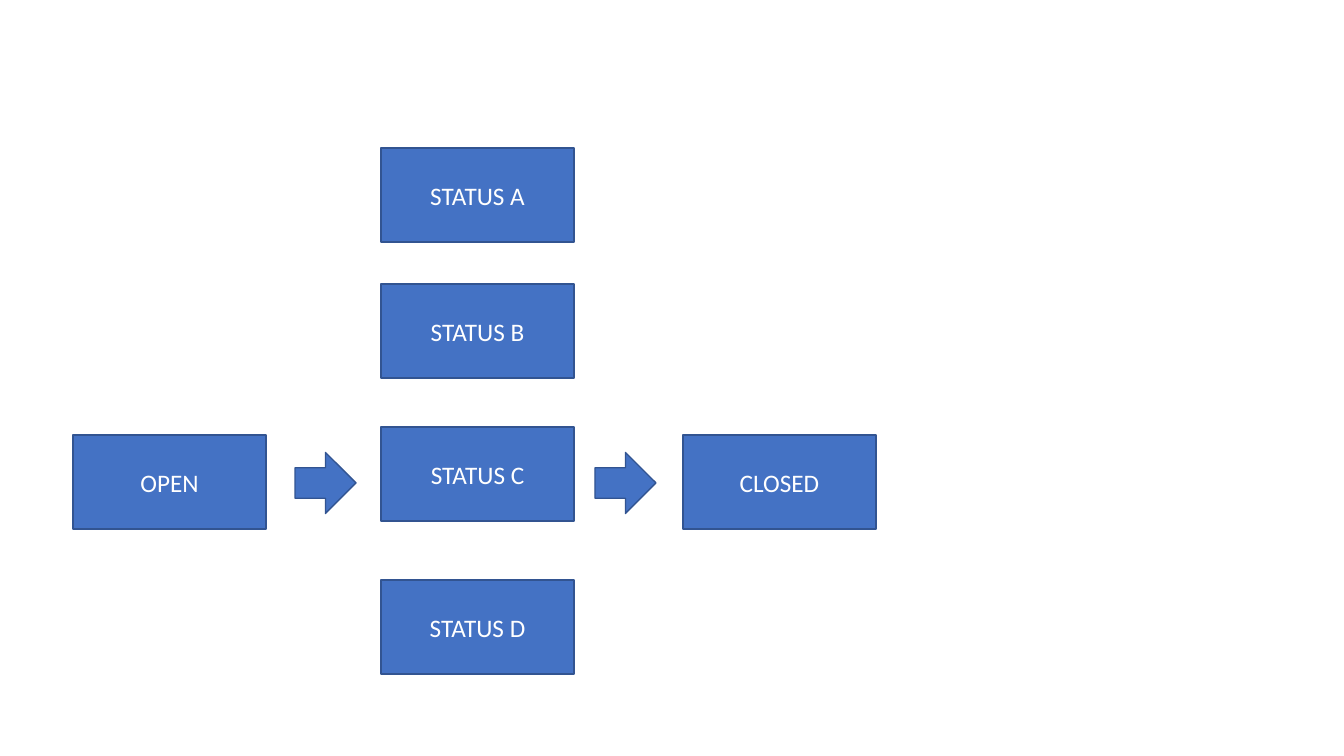
from dataclasses import dataclass

from pptx import Presentation
from pptx.dml.color import RGBColor
from pptx.enum.shapes import MSO_SHAPE as Shape
from pptx.enum.text import MSO_ANCHOR as Anchor, PP_ALIGN as Align
from pptx.util import Pt

# Label, left, top in px
STATES = [
    ("OPEN", 73, 435),
    ("STATUS A", 381, 148),
    ("STATUS B", 381, 284),
    ("STATUS C", 381, 427),
    ("STATUS D", 381, 580),
    ("CLOSED", 683, 435),
]
ARROW_LEFTS = [295, 595]
FLOW_MIDDLE = 483

PAGE_SIZE = (1344, 756)
STATE_SIZE = (193, 94)
ARROW_SIZE = (61, 61)
EMU_PER_PX = 914400 / 100.8


@dataclass(frozen=True)
class Theme:
    fill: RGBColor = RGBColor(0x44, 0x72, 0xC4)
    outline: RGBColor = RGBColor(0x32, 0x54, 0x91)
    text: RGBColor = RGBColor(0xFF, 0xFF, 0xFF)
    font: str = "Calibri"
    text_size: int = 18
    line_width: int = 1


THEME = Theme()


def px(length):
    return round(length * EMU_PER_PX)


def add_block(page, kind, left, top, size):
    block = page.shapes.add_shape(kind, px(left), px(top), *map(px, size))
    block.shadow.inherit = False
    block.fill.solid()
    block.fill.fore_color.rgb = THEME.fill
    block.line.color.rgb = THEME.outline
    block.line.width = Pt(THEME.line_width)
    return block


def add_state(page, label, left, top):
    box = add_block(page, Shape.RECTANGLE, left, top, STATE_SIZE)
    frame = box.text_frame
    frame.text = label
    frame.word_wrap = True
    frame.vertical_anchor = Anchor.MIDDLE
    para = frame.paragraphs[0]
    para.alignment = Align.CENTER
    font = para.runs[0].font
    font.name = THEME.font
    font.size = Pt(THEME.text_size)
    font.color.rgb = THEME.text


def main():
    deck = Presentation()
    deck.slide_width, deck.slide_height = map(px, PAGE_SIZE)
    page = deck.slides.add_slide(deck.slide_layouts.get_by_name("Blank"))
    for label, left, top in STATES:
        add_state(page, label, left, top)
    for left in ARROW_LEFTS:
        arrow_top = FLOW_MIDDLE - ARROW_SIZE[1] / 2
        add_block(page, Shape.RIGHT_ARROW, left, arrow_top, ARROW_SIZE)
    deck.save("out.pptx")


if __name__ == "__main__":
    main()
